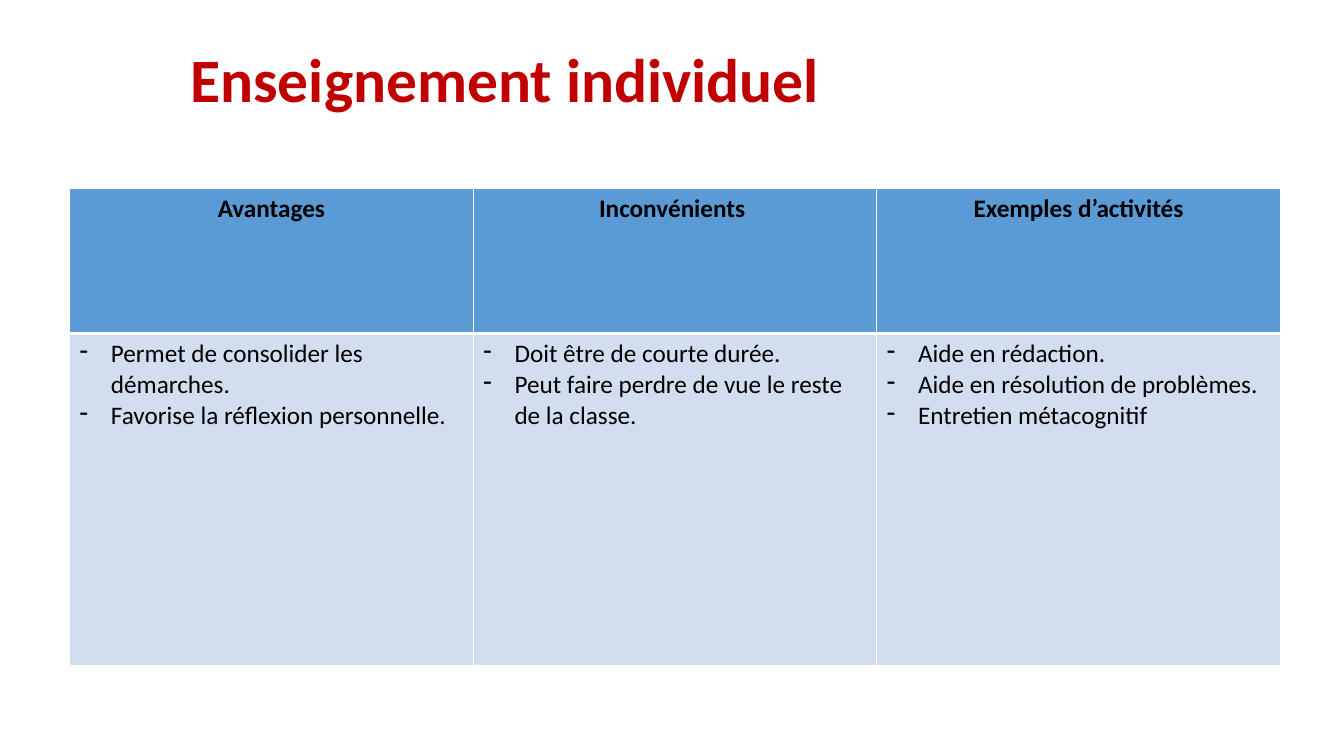
from lxml import etree
from pptx import Presentation
from pptx.dml.color import RGBColor
from pptx.enum.text import MSO_ANCHOR, PP_ALIGN
from pptx.oxml.ns import qn
from pptx.util import Pt

PX = 9144  # EMU per px, 100 px to the inch
CENTER, LEFT = PP_ALIGN.CENTER, PP_ALIGN.LEFT
MIDDLE = MSO_ANCHOR.MIDDLE

RED = RGBColor(0xC0, 0x00, 0x00)
BLACK = RGBColor(0x00, 0x00, 0x00)
WHITE = RGBColor(0xFF, 0xFF, 0xFF)
BLUE = RGBColor(0x5B, 0x9B, 0xD5)
PALE_BLUE = RGBColor(0xD2, 0xDE, 0xEF)

COLUMNS = [
    ("Avantages", ["Permet de consolider les démarches.",
                   "Favorise la réflexion personnelle."]),
    ("Inconvénients ", ["Doit être de courte durée.",
                        "Peut faire perdre de vue le reste de la classe."]),
    ("Exemples d’activités", ["Aide en rédaction.",
                              "Aide en résolution de problèmes.",
                              "Entretien métacognitif"]),
]


class Deck:
    font = "Calibri"

    def __init__(self, width, height):
        self.prs = Presentation()
        self.prs.slide_width, self.prs.slide_height = width * PX, height * PX
        self.s = self.prs.slides.add_slide(self.prs.slide_layouts[6])

    def run(self, p, text, size, color, bold=False):
        r = p.add_run()
        r.text = text
        r.font.name, r.font.size, r.font.bold = self.font, Pt(size), bold
        r.font.color.rgb = color

    def title(self, text, x, y, w, h):
        sp = self.s.shapes.add_textbox(x * PX, y * PX, w * PX, h * PX)
        tf = sp.text_frame
        tf.word_wrap, tf.vertical_anchor = True, MIDDLE
        p = tf.paragraphs[0]
        p.line_spacing = 0.9
        self.run(p, text, 44, RED, bold=True)

    def bullet(self, p, indent):
        pPr = p._p.get_or_add_pPr()
        pPr.set("marL", str(indent * PX))
        pPr.set("indent", str(-indent * PX))
        etree.SubElement(pPr, qn("a:buChar"), char="-")

    def borders(self, cell, **widths):
        tcPr = cell._tc.get_or_add_tcPr()
        for side in "LRTB":
            ln = etree.SubElement(tcPr, qn(f"a:ln{side}"), w=str(Pt(widths.get(side, 1))))
            fill = etree.SubElement(ln, qn("a:solidFill"))
            etree.SubElement(fill, qn("a:srgbClr"), val=str(WHITE))

    def cell(self, cell, lines, fill, header):
        # Borders come before the fill in the cell properties
        self.borders(cell, **({"B": 3} if header else {"T": 3}))
        cell.fill.solid()
        cell.fill.fore_color.rgb = fill
        tf = cell.text_frame
        for i, line in enumerate(lines):
            p = tf.add_paragraph() if i else tf.paragraphs[0]
            p.alignment = CENTER if header else LEFT
            if not header:
                self.bullet(p, 31)
            self.run(p, line, 18, BLACK, bold=header)

    def table(self, columns, x, y, w, row_heights):
        gf = self.s.shapes.add_table(len(row_heights), len(columns), x * PX, y * PX,
                                     w * PX, sum(row_heights) * PX)
        table = gf.table
        for row, height in zip(table.rows, row_heights):
            row.height = height * PX
        for c, (heading, points) in enumerate(columns):
            self.cell(table.cell(0, c), [heading], BLUE, header=True)
            self.cell(table.cell(1, c), points, PALE_BLUE, header=False)


def main():
    deck = Deck(1333, 750)
    # Title
    deck.title("Enseignement individuel", 179, 38, 975, 88)
    # Comparison table
    deck.table(COLUMNS, 69, 187, 1201, [144, 329])
    deck.prs.save("out.pptx")


if __name__ == "__main__":
    main()
